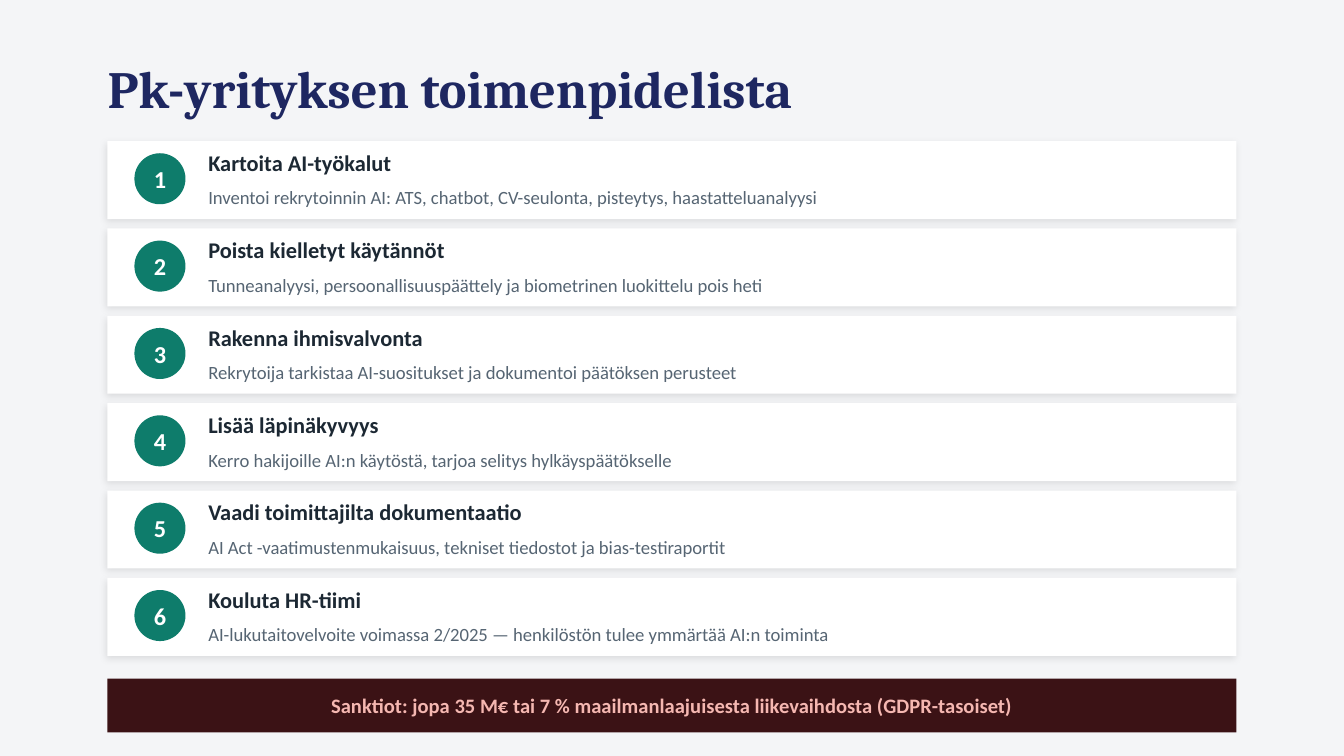
from lxml.etree import SubElement
from pptx import Presentation
from pptx.dml.color import RGBColor
from pptx.enum.shapes import MSO_SHAPE
from pptx.enum.text import MSO_ANCHOR, MSO_AUTO_SIZE, PP_ALIGN
from pptx.oxml.ns import qn
from pptx.util import Pt

BACKGROUND = RGBColor(0xF4, 0xF5, 0xF7)
NAVY = RGBColor(0x1E, 0x27, 0x61)
WHITE = RGBColor(0xFF, 0xFF, 0xFF)
GREEN = RGBColor(0x0E, 0x7C, 0x6B)
INK = RGBColor(0x1C, 0x28, 0x33)
GREY = RGBColor(0x56, 0x65, 0x73)
MAROON = RGBColor(0x3B, 0x12, 0x15)
PINK = RGBColor(0xF5, 0xB7, 0xB1)

LEFT, WIDTH = 57.6, 604.8
FIRST_TOP, PITCH, CARD_HEIGHT = 75.6, 46.8, 41.76
BADGE_SIZE = 27.36
TEXT_LEFT, LINE_HEIGHT = 111.6, 17.28

STEPS = [
    ("Kartoita AI-työkalut",
     "Inventoi rekrytoinnin AI: ATS, chatbot, CV-seulonta, pisteytys, haastatteluanalyysi"),
    ("Poista kielletyt käytännöt",
     "Tunneanalyysi, persoonallisuuspäättely ja biometrinen luokittelu pois heti"),
    ("Rakenna ihmisvalvonta",
     "Rekrytoija tarkistaa AI-suositukset ja dokumentoi päätöksen perusteet"),
    ("Lisää läpinäkyvyys",
     "Kerro hakijoille AI:n käytöstä, tarjoa selitys hylkäyspäätökselle"),
    ("Vaadi toimittajilta dokumentaatio",
     "AI Act -vaatimustenmukaisuus, tekniset tiedostot ja bias-testiraportit"),
    ("Kouluta HR-tiimi",
     "AI-lukutaitovelvoite voimassa 2/2025 — henkilöstön tulee ymmärtää AI:n toiminta"),
]


def write(shape, text, size, color, bold=True, align=PP_ALIGN.LEFT, face="Calibri"):
    """Put one vertically centred line of text in a shape, without margins."""
    frame = shape.text_frame
    frame.text = text
    frame.auto_size = MSO_AUTO_SIZE.NONE
    frame.word_wrap = True
    frame.vertical_anchor = MSO_ANCHOR.MIDDLE
    frame.margin_left = frame.margin_right = frame.margin_top = frame.margin_bottom = 0
    para = frame.paragraphs[0]
    para.alignment = align
    para.font.name, para.font.size, para.font.bold = face, Pt(size), bold
    para.font.color.rgb = color


def add_filled(kind, left, top, width, height, color):
    shape = page.shapes.add_shape(kind, Pt(left), Pt(top), Pt(width), Pt(height))
    shape.shadow.inherit = False
    shape.fill.solid()
    shape.fill.fore_color.rgb = color
    shape.line.fill.background()
    return shape


deck = Presentation()
deck.slide_width, deck.slide_height = Pt(720), Pt(405)
page = deck.slides.add_slide(deck.slide_layouts[5])
page.background.fill.solid()
page.background.fill.fore_color.rgb = BACKGROUND

title = page.shapes.title
title.left, title.top, title.width, title.height = Pt(LEFT), Pt(25.2), Pt(576), Pt(43.2)
write(title, "Pk-yrityksen toimenpidelista", 28, NAVY, face="Cambria")

for number, (heading, detail) in enumerate(STEPS, start=1):
    top = FIRST_TOP + (number - 1) * PITCH

    card = add_filled(MSO_SHAPE.RECTANGLE, LEFT, top, WIDTH, CARD_HEIGHT, WHITE)
    effects = card.element.spPr.find(qn("a:effectLst"))
    shadow = SubElement(effects, qn("a:outerShdw"), blurRad=str(Pt(4)), dist=str(Pt(1.5)),
                        dir=str(135 * 60000), algn="bl", rotWithShape="0")
    shade = SubElement(shadow, qn("a:srgbClr"), val="000000")
    SubElement(shade, qn("a:alpha"), val="10000")

    badge = add_filled(MSO_SHAPE.OVAL, 72, top + 6.48, BADGE_SIZE, BADGE_SIZE, GREEN)
    write(badge, str(number), 13, WHITE, align=PP_ALIGN.CENTER)

    heading_box = page.shapes.add_textbox(
        Pt(TEXT_LEFT), Pt(top + 2.88), Pt(252), Pt(LINE_HEIGHT))
    write(heading_box, heading, 12, INK)
    detail_box = page.shapes.add_textbox(
        Pt(TEXT_LEFT), Pt(top + 21.6), Pt(532.8), Pt(LINE_HEIGHT))
    write(detail_box, detail, 10, GREY, bold=False)

banner = add_filled(MSO_SHAPE.RECTANGLE, LEFT, 363.6, WIDTH, 28.8, MAROON)
write(banner, "Sanktiot: jopa 35 M€ tai 7 % maailmanlaajuisesta liikevaihdosta (GDPR-tasoiset)",
      11, PINK, align=PP_ALIGN.CENTER)

deck.save("out.pptx")
